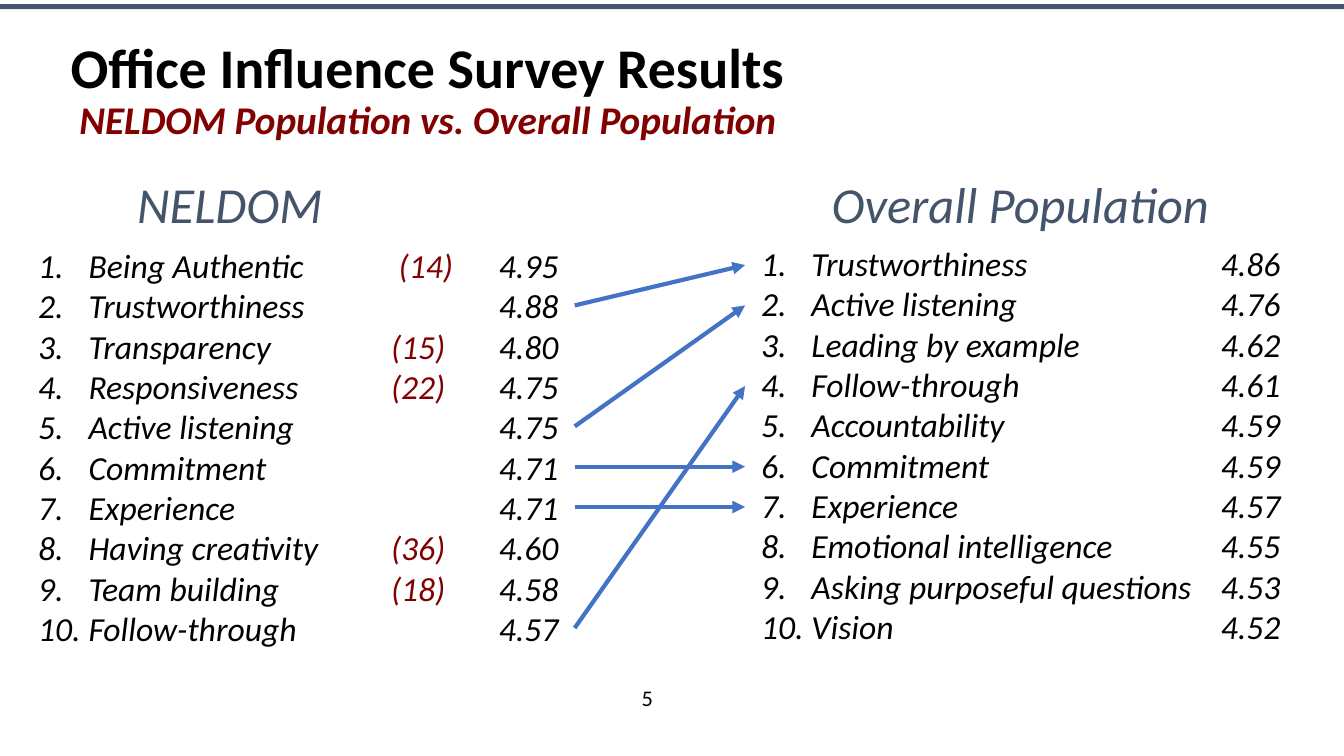
from lxml.etree import SubElement
from pptx import Presentation
from pptx.dml.color import RGBColor
from pptx.enum.shapes import MSO_CONNECTOR as CONN, MSO_SHAPE as SHAPE
from pptx.enum.text import MSO_ANCHOR as ANCHOR, MSO_AUTO_SIZE as AUTO, PP_ALIGN as ALIGN
from pptx.oxml.ns import qn
from pptx.util import Inches, Pt

BLACK, RED, SLATE, BLUE = "000000", "810000", "44546A", "4472C4"
ROW_H = 0.4
SURVEYED = [
    ("Being Authentic", " (14)", "4.95"),
    ("Trustworthiness", "", "4.88"),
    ("Transparency", "(15)", "4.80"),
    ("Responsiveness", "(22)", "4.75"),
    ("Active listening", "", "4.75"),
    ("Commitment", "", "4.71"),
    ("Experience", "", "4.71"),
    ("Having creativity", "(36)", "4.60"),
    ("Team building", "(18)", "4.58"),
    ("Follow-through", "", "4.57"),
]
OVERALL = [
    ("Trustworthiness", "4.86"),
    ("Active listening", "4.76"),
    ("Leading by example", "4.62"),
    ("Follow-through", "4.61"),
    ("Accountability", "4.59"),
    ("Commitment", "4.59"),
    ("Experience", "4.57"),
    ("Emotional intelligence", "4.55"),
    ("Asking purposeful questions", "4.53"),
    ("Vision", "4.52"),
]


def rgb(value):
    """Turn a hex string into a colour."""
    return RGBColor.from_string(value)


def add_run(p, text, color=BLACK, **fmt):
    """Add a formatted run to a paragraph."""
    r = p.add_run()
    r.text = text
    for name, value in {"name": "Calibri", **fmt}.items():
        setattr(r.font, name, value)
    r.font.color.rgb = rgb(color)


def add_box(s, x, y, w, h):
    """Add a wrapping text box and return its text frame."""
    tf = s.shapes.add_textbox(Inches(x), Inches(y), Inches(w), Inches(h)).text_frame
    tf.word_wrap = True
    return tf


def add_top_bar(s, x, y, w, h):
    """Draw the bar along the top edge."""
    sp = s.shapes.add_shape(SHAPE.RECTANGLE, Inches(x), Inches(y), Inches(w), Inches(h))
    sp.shadow.inherit = False
    sp.fill.solid()
    sp.fill.fore_color.rgb = rgb(SLATE)
    sp.line.fill.background()


def add_title(s, x, y, w, h):
    """Place the title and its subtitle line."""
    sp = s.shapes.title
    sp.left, sp.top, sp.width, sp.height = map(Inches, (x, y, w, h))
    tf = sp.text_frame
    margins = {"margin_left": 0.7, "margin_top": 0.4, "margin_right": 0.1, "margin_bottom": 0.05}
    for name, value in margins.items():
        setattr(tf, name, Inches(value))
    tf.word_wrap, tf.auto_size, tf.vertical_anchor = True, AUTO.NONE, ANCHOR.TOP
    p = tf.paragraphs[0]
    p.alignment, p.line_spacing = ALIGN.LEFT, 0.9
    add_run(p, "Office Influence Survey Results", size=Pt(40), bold=True)
    p.add_line_break()
    add_run(p, " NELDOM Population vs. Overall Population", RED, size=Pt(28), bold=True, italic=True)


def add_heading(s, text, x, y, w, h):
    """Place a centred column heading."""
    p = add_box(s, x, y, w, h).paragraphs[0]
    p.alignment, p.line_spacing = ALIGN.CENTER, 0.9
    add_run(p, text, SLATE, size=Pt(36), italic=True)


def add_ranking(s, rows, tabs, x, y, w, h):
    """Place a numbered list whose columns sit on tab stops."""
    tf = add_box(s, x, y, w, h)
    for i, row in enumerate(rows):
        p = tf.add_paragraph() if i else tf.paragraphs[0]
        pPr = p._p.get_or_add_pPr()
        pPr.set("marL", str(Inches(0.5)))
        pPr.set("indent", str(Inches(-0.5)))
        SubElement(pPr, qn("a:buFont"), typeface="+mj-lt")
        SubElement(pPr, qn("a:buAutoNum"), type="arabicPeriod")
        tab_list = SubElement(pPr, qn("a:tabLst"))
        for tab in tabs:
            SubElement(tab_list, qn("a:tab"), pos=str(Inches(tab)), algn="l")
        for j, text in enumerate(row):
            color = RED if "(" in text else BLACK
            add_run(p, "\t" + text if j else text, color, size=Pt(24), italic=True)


def add_links(s, x, y, w):
    """Draw an arrow between the ranks of each item found in both lists."""
    ranks = {row[0]: i for i, row in enumerate(OVERALL)}
    for i, (item, *_) in enumerate(SURVEYED):
        if item not in ranks:
            continue
        ends = (x, y + i * ROW_H, x + w, y + ranks[item] * ROW_H)
        line = s.shapes.add_connector(CONN.STRAIGHT, *map(Inches, ends))
        line.line.color.rgb = rgb(BLUE)
        line.line.width = Pt(3)
        SubElement(line.line._get_or_add_ln(), qn("a:tailEnd"), type="triangle")
        SubElement(line._element.spPr, qn("a:effectLst"))


def add_page_number(s, x, y, w, h):
    """Place the centred page number."""
    tf = add_box(s, x, y, w, h)
    tf.vertical_anchor = ANCHOR.MIDDLE
    p = tf.paragraphs[0]
    p.alignment = ALIGN.CENTER
    add_run(p, "5", size=Pt(16))


def main():
    """Build and save the slide."""
    prs = Presentation()
    prs.slide_width, prs.slide_height = Inches(13.33), Inches(7.5)
    s = prs.slides.add_slide(prs.slide_layouts[5])
    add_top_bar(s, 0, 0.04, 13.33, 0.05)
    add_title(s, 0, 0, 11.95, 0.94)
    add_heading(s, "NELDOM", 1.07, 1.74, 2.42, 0.62)
    add_heading(s, "Overall Population", 7.97, 1.74, 4.3, 0.62)
    add_ranking(s, SURVEYED, (3.5, 4.57), 0.28, 2.38, 5.92, 4.21)
    add_ranking(s, OVERALL, (4.56,), 7.45, 2.36, 5.61, 4.21)
    add_links(s, 5.7, 2.63, 1.69)
    add_page_number(s, 6.05, 6.72, 0.74, 0.4)
    prs.save("out.pptx")


if __name__ == "__main__":
    main()
